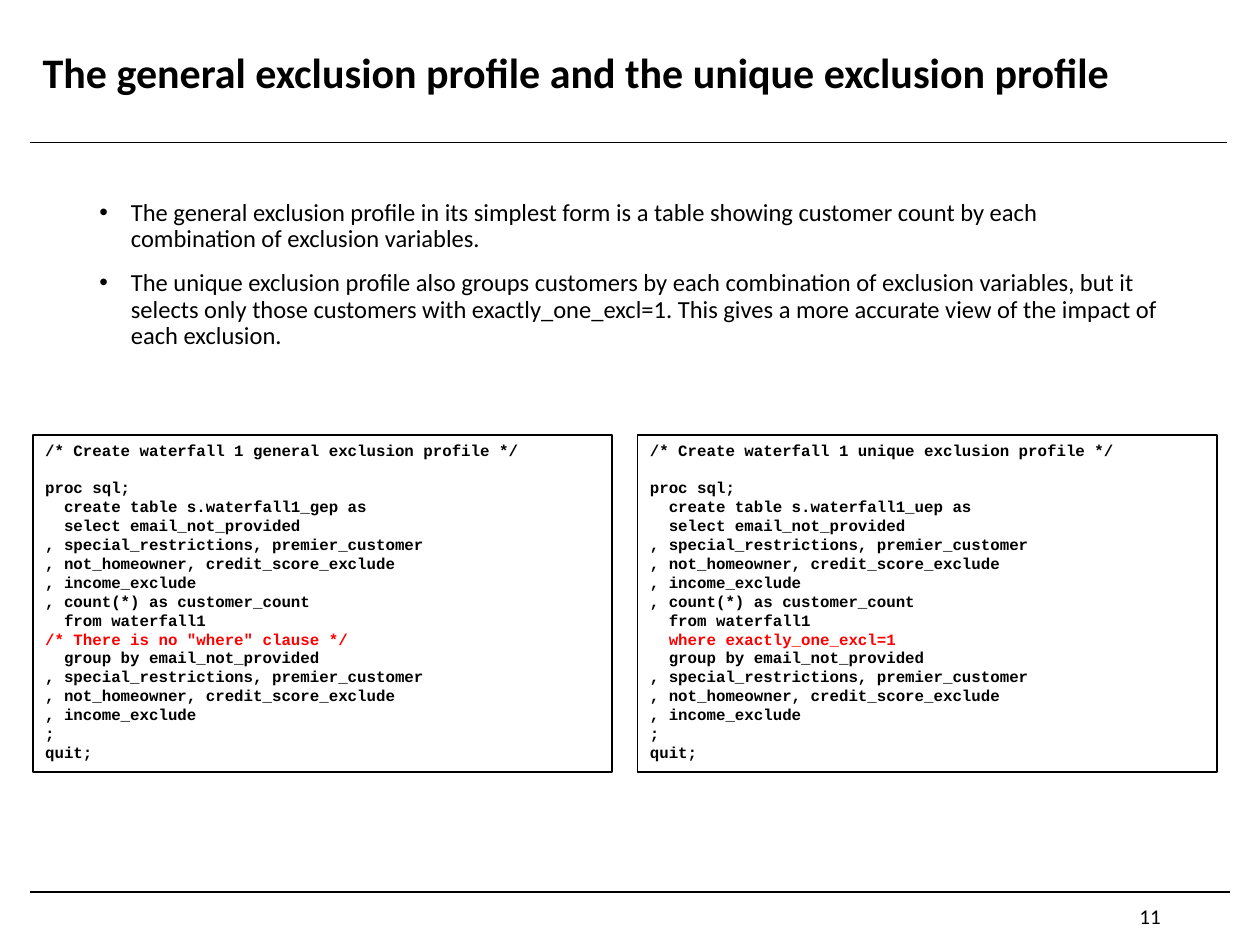
"""Build the slide comparing general and unique exclusion profiles."""
from lxml import etree
from pptx import Presentation
from pptx.dml.color import RGBColor
from pptx.enum import shapes, text
from pptx.oxml import ns
from pptx.util import Inches, Pt

BLACK = RGBColor(0, 0, 0)
WHITE = RGBColor(255, 255, 255)
RED = RGBColor(255, 0, 0)

TITLE = "The general exclusion profile and the unique exclusion profile"
PAGE_NUMBER = "11"
BULLETS = [
    "The general exclusion profile in its simplest form is a table showing customer count "
    "by each combination of exclusion variables.",
    "The unique exclusion profile also groups customers by each combination of exclusion "
    "variables, but it selects only those customers with exactly_one_excl=1. "
    "This gives a more accurate view of the impact of each exclusion.",
]
PROFILES = [
    ("general", "gep", '/* There is no "where" clause */'),
    ("unique", "uep", "  where exactly_one_excl=1"),
]
VARIABLES = [
    ", special_restrictions, premier_customer",
    ", not_homeowner, credit_score_exclude",
    ", income_exclude",
]
RULES = [(1.13, 9.74), (7.08, 9.76)]
RULE_LEFT = 0.24
CODE_LEFT, CODE_TOP, CODE_WIDTH, CODE_HEIGHT, CODE_GAP = 0.26, 3.45, 4.6, 2.68, 0.2
CODE_LINE = 10.2


def query_lines(kind, suffix, clause):
    return [
        f"/* Create waterfall 1 {kind} exclusion profile */",
        "proc sql;",
        f"  create table s.waterfall1_{suffix} as",
        "  select email_not_provided",
        *VARIABLES,
        ", count(*) as customer_count",
        "  from waterfall1",
        clause,
        "  group by email_not_provided",
        *VARIABLES,
        ";",
        "quit;",
    ]


def style(para, size, font="Calibri", color=BLACK, bold=False):
    for span in para.runs:
        span.font.name = font
        span.font.size = Pt(size)
        span.font.bold = bold
        span.font.color.rgb = color


def add_box(page, left, top, width, height, lines, anchor=text.MSO_ANCHOR.TOP):
    box = page.shapes.add_textbox(Inches(left), Inches(top), Inches(width), Inches(height))
    frame = box.text_frame
    frame.word_wrap = True
    frame.vertical_anchor = anchor
    frame.text = "\n".join(lines)
    return box


def add_rule(page, top, right):
    rule = page.shapes.add_connector(
        shapes.MSO_CONNECTOR.STRAIGHT,
        Inches(RULE_LEFT), Inches(top), Inches(right), Inches(top))
    rule.line.color.rgb = BLACK
    rule.line.width = Pt(0.75)
    etree.SubElement(rule._element.spPr, ns.qn("a:effectLst"))


def add_title(page):
    box = add_box(page, 0.24, 0.15, 9.5, 0.89, [TITLE], text.MSO_ANCHOR.MIDDLE)
    box.fill.solid()
    box.fill.fore_color.rgb = WHITE
    para = box.text_frame.paragraphs[0]
    para.line_spacing = 0.9
    style(para, 24, bold=True)


def add_bullets(page):
    box = add_box(page, 0.69, 1.54, 8.62, 1.5, BULLETS)
    for index, para in enumerate(box.text_frame.paragraphs):
        para.line_spacing = 0.9
        para.space_before = Pt(10 if index else 0)
        style(para, 14)
        props = para._p.get_or_add_pPr()
        props.set("marL", str(Inches(0.25)))
        props.set("indent", str(-Inches(0.25)))
        etree.SubElement(props, ns.qn("a:buFont"), typeface="Arial")
        etree.SubElement(props, ns.qn("a:buChar"), char="•")


def add_query(page, column, profile):
    left = CODE_LEFT + column * (CODE_WIDTH + CODE_GAP)
    box = add_box(page, left, CODE_TOP, CODE_WIDTH, CODE_HEIGHT, query_lines(*profile))
    box.line.color.rgb = BLACK
    box.line.width = Pt(1)
    paras = box.text_frame.paragraphs
    paras[0].space_after = Pt(CODE_LINE)
    for para in paras:
        color = RED if para.text == profile[-1] else BLACK
        style(para, 9, "Courier New", color, bold=True)


def add_page_number(page):
    box = add_box(page, 7.06, 7.15, 2.25, 0.24, [PAGE_NUMBER], text.MSO_ANCHOR.MIDDLE)
    para = box.text_frame.paragraphs[0]
    para.alignment = text.PP_ALIGN.RIGHT
    style(para, 12)


def main():
    deck = Presentation()
    deck.slide_width, deck.slide_height = Inches(10), Inches(7.5)
    page = deck.slides.add_slide(deck.slide_layouts[6])
    for top, right in RULES:
        add_rule(page, top, right)
    add_title(page)
    add_bullets(page)
    add_page_number(page)
    for column, profile in enumerate(PROFILES):
        add_query(page, column, profile)
    deck.save("out.pptx")


if __name__ == "__main__":
    main()
